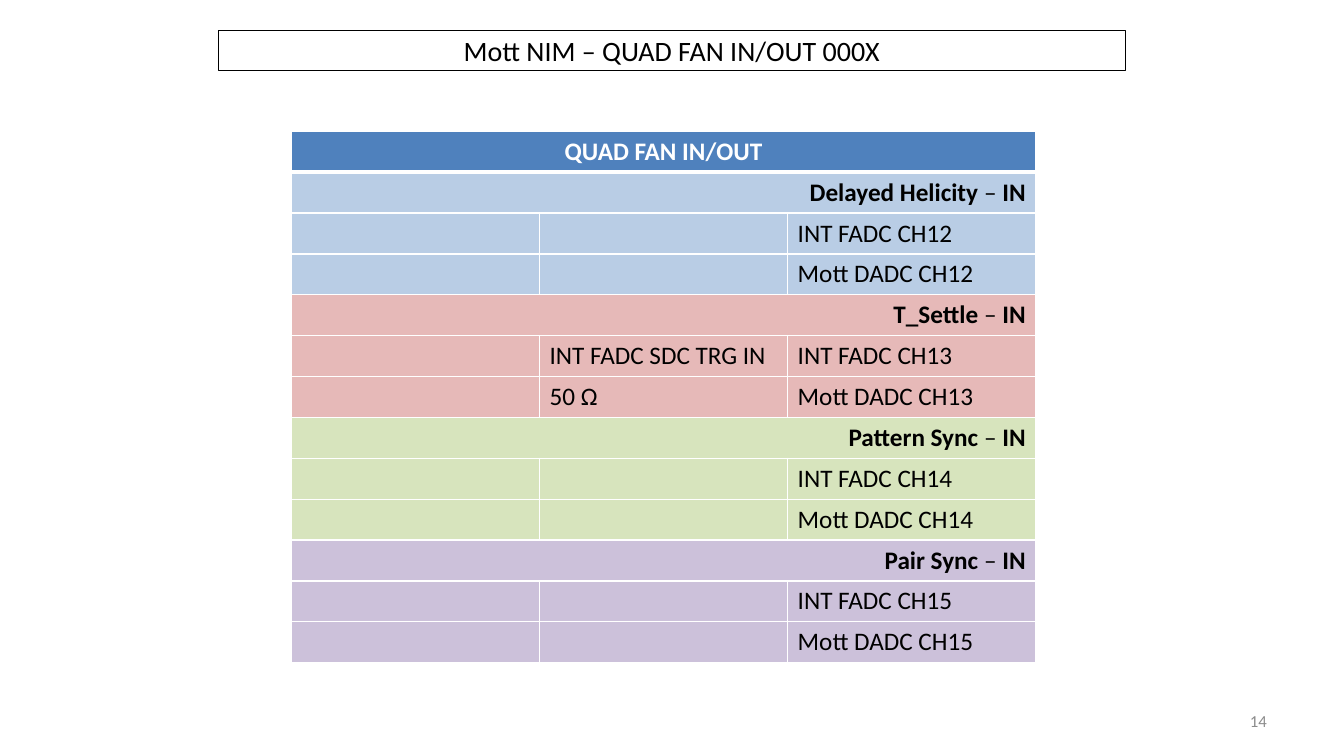
from lxml.etree import SubElement as add_element
from pptx import Presentation
from pptx.dml.color import RGBColor
from pptx.enum.text import MSO_ANCHOR as Anchor, MSO_AUTO_SIZE as AutoSize, PP_ALIGN as Align
from pptx.oxml.ns import qn
from pptx.util import Pt

BLACK = RGBColor(0x00, 0x00, 0x00)
WHITE = RGBColor(0xFF, 0xFF, 0xFF)
GRAY = RGBColor(0x8C, 0x8C, 0x8C)
HEADER_BLUE = RGBColor(0x4F, 0x81, 0xBD)
PALE_BLUE = RGBColor(0xB9, 0xCD, 0xE5)
PALE_RED = RGBColor(0xE6, 0xB9, 0xB8)
PALE_GREEN = RGBColor(0xD7, 0xE4, 0xBD)
PALE_PURPLE = RGBColor(0xCC, 0xC1, 0xDA)

SIGNALS = [
    ("Delayed Helicity", PALE_BLUE, 12, ("", "")),
    ("T_Settle", PALE_RED, 13, ("INT FADC SDC TRG IN", "50 Ω")),
    ("Pattern Sync", PALE_GREEN, 14, ("", "")),
    ("Pair Sync", PALE_PURPLE, 15, ("", "")),
]
COLUMNS = 3
ROWS_PER_SIGNAL = 3
ROWS = 1 + ROWS_PER_SIGNAL * len(SIGNALS)
COLUMN_WIDTH = 177.2
ROW_HEIGHT = 29.2


def write(para, spans, size, color, align=Align.LEFT):
    para.alignment = align
    for text, bold in spans:
        span = para.add_run()
        span.text = text
        for name, value in {"name": "Calibri", "size": Pt(size), "bold": bold}.items():
            setattr(span.font, name, value)
        span.font.color.rgb = color


def format_frame(box):
    frame = box.text_frame
    settings = {"word_wrap": True, "auto_size": AutoSize.NONE, "vertical_anchor": Anchor.MIDDLE}
    for name, value in settings.items():
        setattr(frame, name, value)
    return frame.paragraphs[0]


deck = Presentation()
deck.slide_width, deck.slide_height = Pt(960), Pt(540)
page = deck.slides.add_slide(deck.slide_layouts[5])

title = page.shapes.title
for name, value in {"left": 156, "top": 21.6, "width": 648, "height": 28.8}.items():
    setattr(title, name, Pt(value))
title.line.color.rgb = BLACK
title.line.width = Pt(0.25)
write(format_frame(title), [("Mott NIM – QUAD FAN IN/OUT 000X", False)], 20, BLACK, Align.CENTER)

table = page.shapes.add_table(
    ROWS, COLUMNS, Pt(208.2), Pt(93.8), Pt(COLUMNS * COLUMN_WIDTH), Pt(ROWS * ROW_HEIGHT)
).table
for column in table.columns:
    column.width = Pt(COLUMN_WIDTH)
for row in table.rows:
    row.height = Pt(ROW_HEIGHT)

fills = [HEADER_BLUE]
for signal, color, channel, middle in SIGNALS:
    fills += [color] * ROWS_PER_SIGNAL
for row, color in zip(table.rows, fills):
    for cell in row.cells:
        cell.fill.solid()
        cell.fill.fore_color.rgb = color

header = table.cell(0, 0)
header.merge(table.cell(0, COLUMNS - 1))
write(header.text_frame.paragraphs[0], [("QUAD FAN IN/OUT", True)], 18, WHITE, Align.CENTER)
for cell in table.rows[0].cells:
    properties = cell._tc.get_or_add_tcPr()
    border = add_element(properties, qn("a:lnB"), w=str(Pt(3)))
    add_element(add_element(border, qn("a:solidFill")), qn("a:srgbClr"), val=str(WHITE))
    properties.insert(0, border)

for index, (signal, color, channel, middle) in enumerate(SIGNALS):
    top = 1 + index * ROWS_PER_SIGNAL
    heading = table.cell(top, 0)
    heading.merge(table.cell(top, COLUMNS - 1))
    spans = [(f"{signal} ", True), ("– ", False), ("IN", True)]
    write(heading.text_frame.paragraphs[0], spans, 18, BLACK, Align.RIGHT)
    for offset, (note, module) in enumerate(zip(middle, ("INT FADC", "Mott DADC")), start=1):
        for column, text in ((1, note), (2, f"{module} CH{channel}")):
            if text:
                para = table.cell(top + offset, column).text_frame.paragraphs[0]
                write(para, [(text, False)], 18, BLACK)

number = page.shapes.add_textbox(Pt(688), Pt(500.4), Pt(224), Pt(28.8))
write(format_frame(number), [("14", False)], 12, GRAY, Align.RIGHT)

deck.save("out.pptx")
